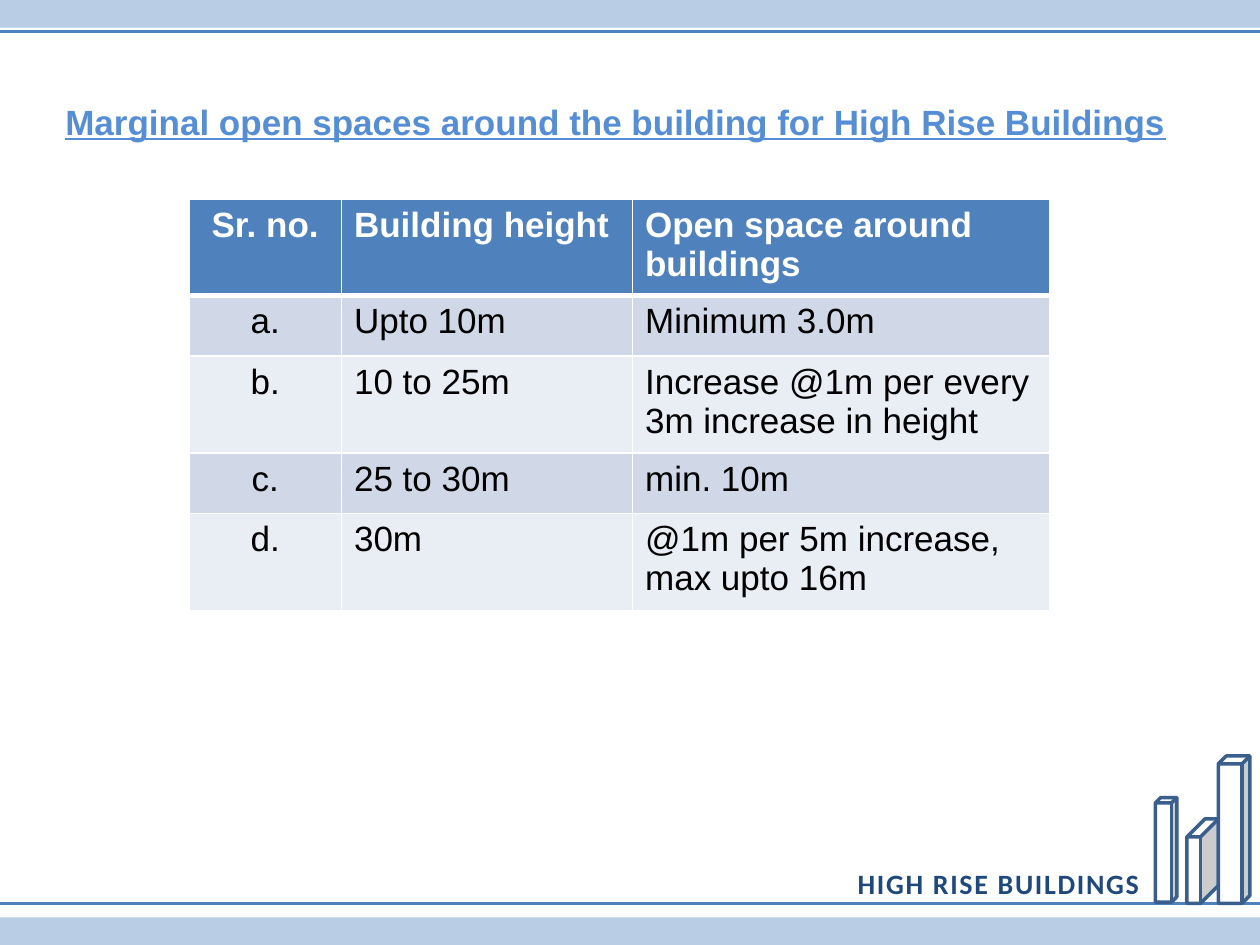
from lxml import etree
from pptx import Presentation, util as u
from pptx.dml.color import RGBColor
from pptx.enum import shapes, text
from pptx.oxml.ns import qn

COLORS = {
    "band": "B9CDE5", "rule": "4F81BD", "outline": "3A5F8C", "white": "FFFFFF",
    "footer": "1F497D", "title": "558ED5", "black": "000000",
    "odd_row": "D0D8E8", "even_row": "E9EDF4",
}

# Content
TITLE = "Marginal open spaces around the building for High Rise Buildings"
FOOTER = "HIGH RISE BUILDINGS"
ROWS = [
    ("Sr. no.", "Building height", "Open space around buildings"),
    ("a.", "Upto 10m", "Minimum 3.0m"),
    ("b.", "10 to 25m", "Increase @1m per every 3m increase in height"),
    ("c.", "25 to 30m", "min. 10m"),
    ("d.", "30m", "@1m per 5m increase, max upto 16m"),
]
COLUMN_WIDTHS = (1.21, 2.31, 3.31)
ROW_HEIGHTS = (0.75, 0.48, 0.77, 0.48, 0.77)
TABLE_LEFT, TABLE_TOP = 1.5, 1.58

PAGE_WIDTH, PAGE_HEIGHT = 10, 7.5
BAND_HEIGHT = 0.22
RULE_TOPS = (0.25, 7.17)
# Left, top, width, height, depth of each tower
TOWERS = [
    (9.17, 6.33, 0.17, 0.83, 0.25),
    (9.42, 6.5, 0.25, 0.67, 0.57),
    (9.67, 6, 0.25, 1.17, 0.25),
]


def color(name):
    return RGBColor.from_string(COLORS[name])


def add_solid(page, kind, bounds, fill):
    shape = page.shapes.add_shape(kind, *map(u.Inches, bounds))
    shape.shadow.inherit = False
    shape.fill.solid()
    shape.fill.fore_color.rgb = color(fill)
    shape.line.fill.background()
    return shape


def add_span(para, words, font, size, ink, bold=False):
    span = para.add_run()
    span.text = words
    span.font.name = font
    span.font.size = u.Pt(size)
    span.font.bold = bold
    span.font.color.rgb = color(ink)
    return span


def add_text(page, bounds, wrap):
    box = page.shapes.add_textbox(*map(u.Inches, bounds))
    box.text_frame.word_wrap = wrap
    box.text_frame.auto_size = text.MSO_AUTO_SIZE.SHAPE_TO_FIT_TEXT
    return box.text_frame.paragraphs[0]


def set_borders(cell, bottom_width):
    properties = cell._tc.get_or_add_tcPr()
    widths = {"a:lnL": 1, "a:lnR": 1, "a:lnT": 1, "a:lnB": bottom_width}
    for position, (tag, width) in enumerate(widths.items()):
        line = etree.Element(qn(tag), w=str(u.Pt(width)))
        fill = etree.SubElement(line, qn("a:solidFill"))
        etree.SubElement(fill, qn("a:srgbClr"), val=COLORS["white"])
        properties.insert(position, line)


def add_frame(page):
    # Bands and rules at the top and bottom
    for top in (0, PAGE_HEIGHT - BAND_HEIGHT):
        add_solid(page, shapes.MSO_SHAPE.RECTANGLE,
                  (0, top, PAGE_WIDTH, BAND_HEIGHT), "band")
    for top in RULE_TOPS:
        rule = page.shapes.add_connector(
            shapes.MSO_CONNECTOR.STRAIGHT, 0, u.Inches(top),
            u.Inches(PAGE_WIDTH), u.Inches(top))
        rule.line.color.rgb = color("rule")
        rule.line.width = u.Pt(2)
        etree.SubElement(rule._element.spPr, qn("a:effectLst"))

    # Towers and footer
    for *bounds, depth in TOWERS:
        tower = add_solid(page, shapes.MSO_SHAPE.CUBE, bounds, "white")
        tower.adjustments[0] = depth
        tower.line.color.rgb = color("outline")
        tower.line.width = u.Pt(2)
    para = add_text(page, (6.68, 6.83, 2.49, 0.37), wrap=False)
    para.alignment = text.PP_ALIGN.CENTER
    span = add_span(para, FOOTER, "Calibri", 16, "footer", bold=True)
    span.font._element.set("spc", "100")


def add_title(page):
    para = add_text(page, (0.42, 0.58, 9, 0.61), wrap=True)
    para.line_spacing = 1.5
    span = add_span(para, TITLE, "Arial", 20, "title", bold=True)
    span.font.underline = True


def add_space_table(page):
    bounds = (TABLE_LEFT, TABLE_TOP, sum(COLUMN_WIDTHS), sum(ROW_HEIGHTS))
    table = page.shapes.add_table(
        len(ROWS), len(COLUMN_WIDTHS), *map(u.Inches, bounds)).table
    for column, width in zip(table.columns, COLUMN_WIDTHS):
        column.width = u.Inches(width)
    for i, (row, height) in enumerate(zip(ROWS, ROW_HEIGHTS)):
        table.rows[i].height = u.Inches(height)
        header = i == 0
        fill = "rule" if header else "odd_row" if i % 2 else "even_row"
        for j, words in enumerate(row):
            cell = table.cell(i, j)
            cell.fill.solid()
            cell.fill.fore_color.rgb = color(fill)
            set_borders(cell, 3 if header else 1)
            para = cell.text_frame.paragraphs[0]
            if j == 0:
                para.alignment = text.PP_ALIGN.CENTER
            add_span(para, words, "Arial", 20,
                     "white" if header else "black", bold=header)
        if i == 1:
            # The heavy header rule is shared with the first body row
            for cell in table.rows[i].cells:
                cell._tc.tcPr.find(qn("a:lnT")).set("w", str(u.Pt(3)))


def main():
    deck = Presentation()
    deck.slide_width = u.Inches(PAGE_WIDTH)
    deck.slide_height = u.Inches(PAGE_HEIGHT)
    page = deck.slides.add_slide(deck.slide_layouts[6])
    add_frame(page)
    add_title(page)
    add_space_table(page)
    deck.save("out.pptx")


if __name__ == "__main__":
    main()
